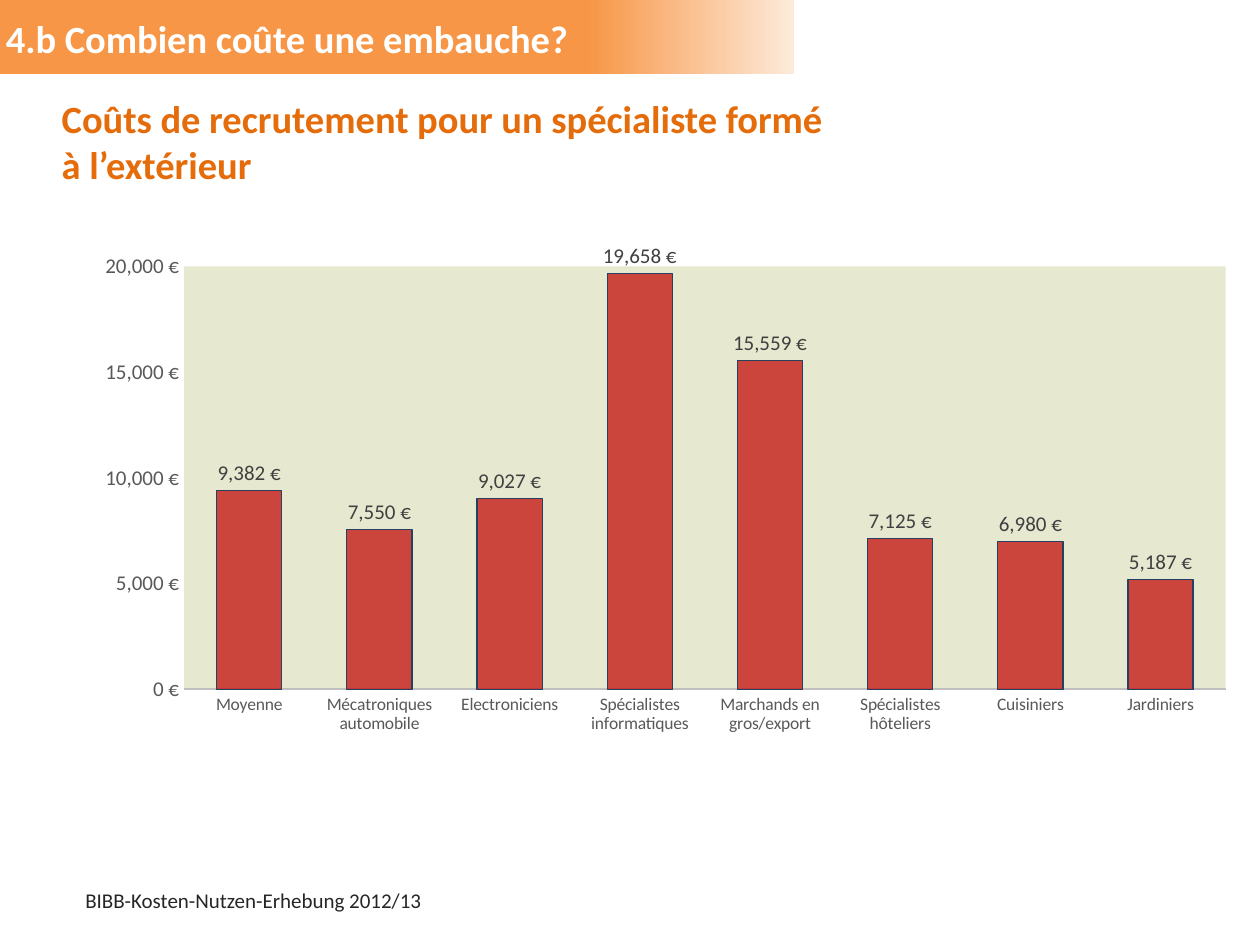
from lxml import etree
from pptx import Presentation
from pptx.chart.data import CategoryChartData
from pptx.dml.color import RGBColor
from pptx.enum.chart import XL_CHART_TYPE, XL_LABEL_POSITION, XL_TICK_MARK
from pptx.enum.shapes import MSO_SHAPE
from pptx.enum.text import MSO_ANCHOR, MSO_AUTO_SIZE, PP_ALIGN
from pptx.oxml import parse_xml
from pptx.oxml.ns import nsdecls, qn
from pptx.util import Cm, Pt

COLUMNS = XL_CHART_TYPE.COLUMN_CLUSTERED
OUTSIDE = XL_LABEL_POSITION.OUTSIDE_END
NO_TICK = XL_TICK_MARK.NONE
RECTANGLE = MSO_SHAPE.RECTANGLE
TOP, MIDDLE = MSO_ANCHOR.TOP, MSO_ANCHOR.MIDDLE
NO_FIT = MSO_AUTO_SIZE.NONE
LEFT = PP_ALIGN.LEFT

FONT = "Calibri"
EURO = '#,##0\\ "€"'
HEADING = "4.b Combien coûte une embauche?"
TITLE = "Coûts de recrutement pour un spécialiste formé à l’extérieur"
SOURCE = "BIBB-Kosten-Nutzen-Erhebung 2012/13"
COSTS = {
    "Moyenne": 9382,
    "Mécatroniques automobile": 7550,
    "Electroniciens": 9027,
    "Spécialistes informatiques": 19658,
    "Marchands en gros/export": 15559,
    "Spécialistes hôteliers": 7125,
    "Cuisiniers": 6980,
    "Jardiniers": 5187,
}
BANNER_STOPS = [(0.74, "F79646"), (1, "FDEADA")]
PLOT_AREA = {"x": 0.12, "y": 0.1, "w": 0.86, "h": 0.63}
PLOT_AREA = {"x": 0.122, "y": 0.104, "w": 0.862, "h": 0.63}


def rgb(value):
    return RGBColor.from_string(value)


def place(left, top, width, height):
    return Cm(left), Cm(top), Cm(width), Cm(height)


def style(font, size, color, bold=False):
    font.name, font.size, font.bold = FONT, Pt(size), bold
    font.color.rgb = rgb(color)


def write(shape, text, size, color, bold=False, anchor=TOP, wrap=True):
    frame = shape.text_frame
    frame.auto_size, frame.word_wrap, frame.vertical_anchor = NO_FIT, wrap, anchor
    para = frame.paragraphs[0]
    para.text, para.alignment = text, LEFT
    style(para.font, size, color, bold)


def add_rectangle(page, *area):
    shape = page.shapes.add_shape(RECTANGLE, *place(*area))
    shape.shadow.inherit = False
    shape.line.fill.background()
    return shape


def add_banner(page):
    banner = add_rectangle(page, 0, 0, 16, 1.5)
    banner.fill.gradient()
    banner.fill.gradient_angle = 0
    for stop, (position, color) in zip(banner.fill.gradient_stops, BANNER_STOPS):
        stop.position = position
        stop.color.rgb = rgb(color)
    heading = page.shapes.add_textbox(*place(-0.13, 0.18, 16.84, 1.2))
    write(heading, HEADING, 22, "FFFFFF", bold=True)


def format_plot_area(chart):
    area = chart.element.find(".//" + qn("c:plotArea"))
    for old in area.findall(qn("c:layout")):
        area.remove(old)
    layout = etree.Element(qn("c:layout"))
    manual = etree.SubElement(layout, qn("c:manualLayout"))
    settings = {"layoutTarget": "inner", "xMode": "edge", "yMode": "edge", **PLOT_AREA}
    for name, value in settings.items():
        etree.SubElement(manual, qn("c:" + name)).set("val", str(value))
    area.insert(0, layout)
    area.append(parse_xml(
        f'<c:spPr {nsdecls("c", "a")}><a:solidFill><a:srgbClr val="E7E8D0"/>'
        "</a:solidFill></c:spPr>"))


def add_cost_chart(page):
    data = CategoryChartData(number_format=EURO)
    data.categories = list(COSTS)
    data.add_series("Series 1", list(COSTS.values()))
    chart = page.shapes.add_chart(COLUMNS, *place(0.74, 3.96, 24.36, 13.54), data).chart
    chart.has_title = chart.has_legend = False
    style(chart.font, 10, "000000")

    categories, values = chart.category_axis, chart.value_axis
    for axis, size in ((categories, 10), (values, 12)):
        axis.major_tick_mark = axis.minor_tick_mark = NO_TICK
        axis.has_major_gridlines = False
        style(axis.tick_labels.font, size, "595959")
    categories.format.line.color.rgb = rgb("BFBFBF")
    categories.format.line.width = Pt(1.25)
    values.format.line.fill.background()
    values.minimum_scale, values.maximum_scale, values.major_unit = 0, 20000, 5000

    plot = chart.plots[0]
    plot.gap_width, plot.vary_by_categories = 100, False
    plot.has_data_labels = True
    labels = plot.data_labels
    labels.show_value, labels.position = True, OUTSIDE
    style(labels.font, 12, "404040")
    for numbers in (values.tick_labels, labels):
        numbers.number_format, numbers.number_format_is_linked = EURO, False

    bars = plot.series[0].format
    bars.fill.solid()
    bars.fill.fore_color.rgb = rgb("C00000")
    bars.line.color.rgb = rgb("254061")
    bars.line.width = Pt(0.75)
    steps = ("c:ser", "c:spPr", "a:solidFill", "a:srgbClr")
    fill_color = chart.element.find(".//" + "/".join(map(qn, steps)))
    etree.SubElement(fill_color, qn("a:alpha")).set("val", "70000")
    format_plot_area(chart)


def main():
    deck = Presentation()
    deck.slide_width, deck.slide_height = Cm(25.4), Cm(19.05)
    page = deck.slides.add_slide(deck.slide_layouts[5])
    add_banner(page)

    source = add_rectangle(page, 1.47, 17.55, 8.92, 1.19)
    source.fill.solid()
    source.fill.fore_color.rgb = rgb("FFFFFF")
    write(source, SOURCE, 12, "262626", anchor=MIDDLE, wrap=False)

    add_cost_chart(page)

    title = page.shapes.title
    title.left, title.top, title.width, title.height = place(0.99, 1.78, 16.31, 2.13)
    write(title, TITLE, 22, "E46C0A", bold=True)
    deck.save("out.pptx")


if __name__ == "__main__":
    main()
